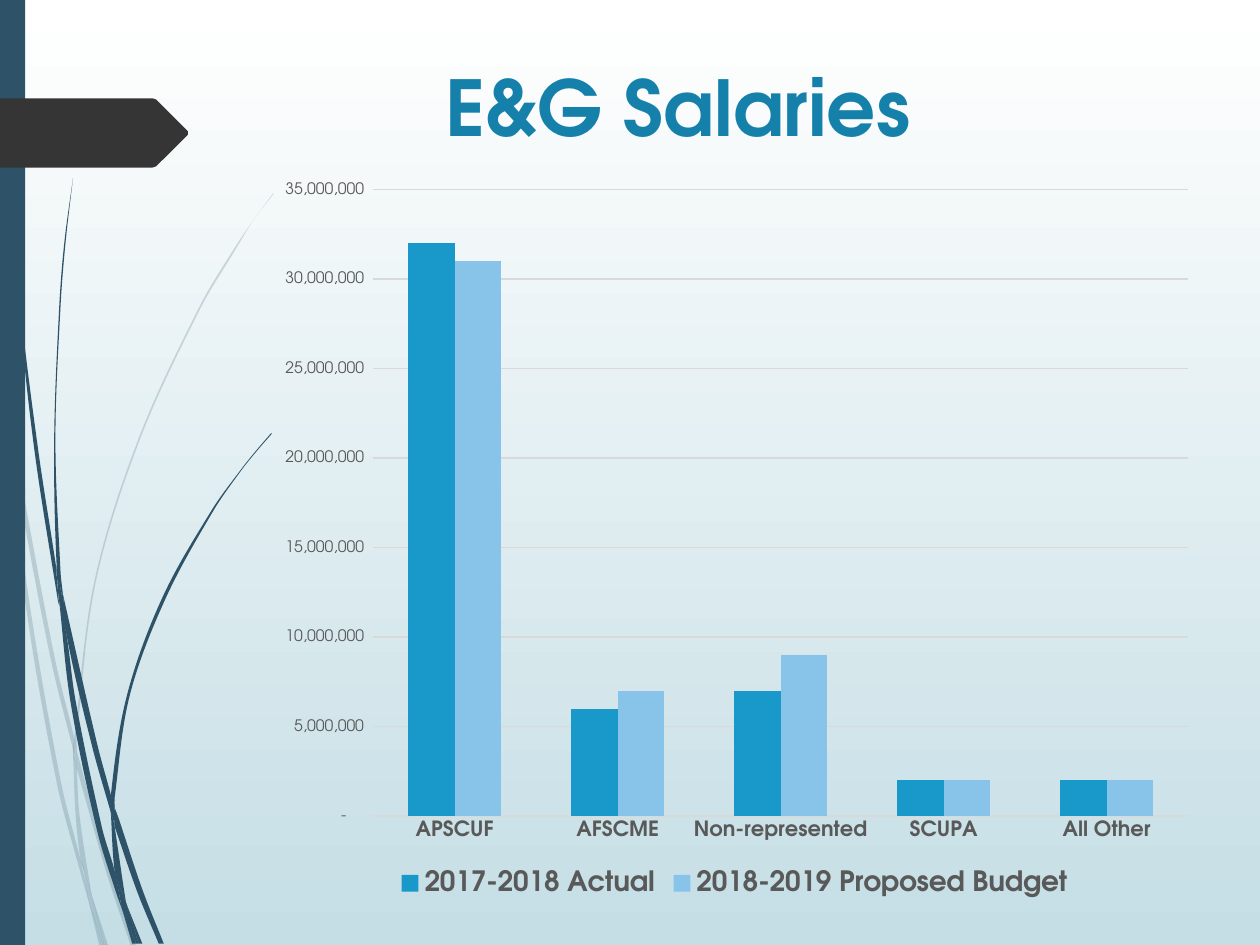
from math import dist
from lxml import etree
from pptx import Presentation
from pptx.chart.data import CategoryChartData
from pptx.dml.color import RGBColor
from pptx.enum.chart import XL_CHART_TYPE, XL_LEGEND_POSITION, XL_TICK_MARK
from pptx.enum.shapes import MSO_SHAPE
from pptx.enum.text import MSO_ANCHOR, PP_ALIGN
from pptx.oxml.ns import qn
from pptx.util import Inches, Pt

COLUMNS = XL_CHART_TYPE.COLUMN_CLUSTERED
LEGEND_BOTTOM = XL_LEGEND_POSITION.BOTTOM
NO_TICK = XL_TICK_MARK.NONE
RECTANGLE = MSO_SHAPE.RECTANGLE
MIDDLE = MSO_ANCHOR.MIDDLE
CENTER = PP_ALIGN.CENTER

FONT = "TeX Gyre Adventor"
WHITE = RGBColor(0xFF, 0xFF, 0xFF)
PALE_BLUE = RGBColor(0xC5, 0xDE, 0xE5)
NAVY = RGBColor(0x2E, 0x53, 0x69)
CHARCOAL = RGBColor(0x35, 0x35, 0x35)
TITLE_BLUE = RGBColor(0x15, 0x81, 0xAA)
TEXT_GRAY = RGBColor(0x59, 0x59, 0x59)
GRID_GRAY = RGBColor(0xD9, 0xD9, 0xD9)
ACTUAL_BLUE = RGBColor(0x19, 0x99, 0xC9)
BUDGET_BLUE = RGBColor(0x88, 0xC3, 0xEA)

TITLE = "E&G Salaries"
CATEGORIES = ["APSCUF", "AFSCME", "Non-represented", "SCUPA", "All Other"]
SERIES = [
    ("2017-2018 Actual", ACTUAL_BLUE, [32000000, 6000000, 7000000, 2000000, 2000000]),
    ("2018-2019 Proposed Budget", BUDGET_BLUE, [31000000, 7000000, 9000000, 2000000, 2000000]),
]
NUMBER_FORMAT = '_(* #,##0_);_(* \\(#,##0\\);_(* "-"??_);_(@_)'

# Each blade of grass has two edges, both listed from top to bottom, in inches.
PALE_BLADES = [
    ([(0, 2.82), (.06, 3.22), (.08, 3.5)], [(0, 2.99), (.07, 3.44), (.08, 3.5)]),
    ([(.1, 3.45), (.43, 5.2), (.59, 5.86)], [(.12, 3.76), (.4, 5.22), (.59, 5.99)]),
    ([(.61, 5.96), (.64, 6.07), (.88, 6.92), (1.08, 7.51)],
     [(.61, 6.1), (.85, 6.94), (1.04, 7.51)]),
    ([(.73, 7.11), (.86, 7.51)], [(.73, 7.11), (.83, 7.51)]),
    ([(.08, 3.5), (.12, 3.76), (.22, 4.69), (.48, 6.19), (.64, 6.83), (.69, 7.07), (.7, 7.14)],
     [(.08, 3.5), (.19, 4.7), (.45, 6.21), (.64, 6.93), (.7, 7.14)]),
    ([(.58, 5.99), (.61, 6.08), (.61, 6.1), (.63, 6.46), (.72, 7.06), (.73, 7.11)],
     [(.58, 5.99), (.6, 6.46), (.64, 6.83), (.67, 6.92), (.73, 7.11)]),
    ([(2.17, 1.53), (2.01, 1.75), (1.86, 1.97), (1.58, 2.44), (1.1, 3.48),
      (.75, 4.61), (.59, 5.84), (.59, 5.86), (.61, 5.96)],
     [(2.17, 1.54), (2.01, 1.75), (1.87, 1.98), (1.59, 2.45), (1.11, 3.49),
      (.76, 4.62), (.61, 5.84), (.61, 5.96)]),
    ([(.7, 7.14), (.82, 7.51)], [(.7, 7.14), (.79, 7.51)]),
    ([(.59, 5.86), (.61, 5.96), (.61, 6.1)], [(.59, 5.86), (.58, 5.99), (.61, 6.08), (.61, 6.1)]),
    ([(.65, 6.83), (.67, 6.92), (.73, 7.11), (.83, 7.51)],
     [(.65, 6.83), (.69, 7.07), (.7, 7.14), (.82, 7.51)]),
]
DARK_BLADES = [
    ([(.03, 0), (.04, .48), (.06, 1.09), (.15, 2.32), (.3, 3.55), (.45, 4.53),
      (.45, 4.57), (.47, 4.81)],
     [(.02, 0), (.03, .48), (.05, 1.1), (.14, 2.33), (.27, 3.55), (.46, 4.77), (.47, 4.81)]),
    ([(.5, 4.72), (.77, 5.9), (.88, 6.31), (.88, 6.33), (.88, 6.45)],
     [(.5, 4.72), (.53, 5.05), (.73, 5.92), (.88, 6.45)]),
    ([(.91, 6.41), (.94, 6.49), (1.13, 7.06), (1.3, 7.49)],
     [(.91, 6.56), (1.09, 7.08), (1.26, 7.49)]),
    ([(.47, 4.77), (.53, 5.05), (.6, 5.56), (.81, 6.57), (.91, 6.91), (.96, 7.17), (.97, 7.22)],
     [(.47, 4.77), (.56, 5.57), (.77, 6.59), (.92, 7.08), (.97, 7.22)]),
    ([(.58, 1.41), (.52, 1.93), (.48, 2.44), (.44, 3.49), (.48, 4.53), (.5, 4.72)],
     [(.58, 1.41), (.51, 1.93), (.47, 2.44), (.43, 3.49), (.45, 4.49), (.49, 4.72)]),
    ([(1.01, 7.19), (1.13, 7.49)], [(1.01, 7.19), (1.1, 7.49)]),
    ([(.45, 4.49), (.49, 4.72), (.5, 4.72), (.53, 5.05)],
     [(.45, 4.49), (.45, 4.53), (.47, 4.77), (.53, 5.05)]),
    ([(2.15, 3.44), (2.03, 3.58), (1.91, 3.73), (1.68, 4.05), (1.29, 4.74),
      (1.01, 5.51), (.88, 6.31), (.91, 6.41)],
     [(2.16, 3.44), (2.03, 3.59), (1.91, 3.74), (1.69, 4.06), (1.31, 4.76),
      (1.03, 5.52), (.91, 6.33), (.91, 6.41)]),
    ([(.97, 7.22), (1.08, 7.49)], [(.97, 7.22), (1.05, 7.49)]),
    ([(.88, 6.45), (.9, 6.51), (.91, 6.56), (1, 7.16), (1.01, 7.19)],
     [(.88, 6.45), (.91, 6.91), (.96, 7.06), (1.01, 7.19)]),
    ([(.88, 6.31), (.91, 6.41), (.91, 6.56)],
     [(.88, 6.31), (.88, 6.33), (.88, 6.45), (.9, 6.51), (.91, 6.56)]),
    ([(.91, 6.91), (.96, 7.06), (1.01, 7.19), (1.1, 7.49)],
     [(.91, 6.91), (.96, 7.17), (.97, 7.22), (1.08, 7.49)]),
]
TAG = [(0, .78), (1.21, .78), (1.24, .79), (1.49, 1.04), (1.49, 1.07),
       (1.24, 1.32), (1.21, 1.33), (0, 1.33)]


def format_font(font, size, color, bold=False):
    font.name = FONT
    font.size = Pt(size)
    font.bold = bold
    font.color.rgb = color


def paint(shape, color, opacity=100):
    shape.shadow.inherit = False
    shape.line.fill.background()
    shape.fill.solid()
    shape.fill.fore_color.rgb = color
    if opacity < 100:
        rgb = shape._element.spPr.find(qn("a:solidFill")).find(qn("a:srgbClr"))
        etree.SubElement(rgb, qn("a:alpha")).set("val", str(opacity * 1000))


def add_outline(shapes, points, color, opacity=100):
    corners = [(Inches(x), Inches(y)) for x, y in points]
    builder = shapes.build_freeform(*corners[0])
    builder.add_line_segments(corners[1:], close=True)
    shape = builder.convert_to_shape()
    paint(shape, color, opacity)
    return shape


def bezier_controls(edge):
    """Yield both control points for each span of a smooth curve through edge."""
    padded = [edge[0], *edge, edge[-1]]
    for before, start, end, after in zip(padded, padded[1:], padded[2:], padded[3:]):
        reach = dist(start, end) / 3
        first = reach / dist(before, end)
        second = reach / dist(start, after)
        yield (tuple(s + (e - b) * first for b, s, e in zip(before, start, end)),
               tuple(e - (a - s) * second for s, e, a in zip(start, end, after)))


def add_blade(shapes, edges, color, opacity):
    down, up = edges[0], edges[1][::-1]
    points = down + up[up[0] == down[-1]:]
    shape = add_outline(shapes, points, color, opacity)
    controls = {}
    for edge in (down, up):
        controls.update(zip(zip(edge, edge[1:]), bezier_controls(edge)))
    left, top = (min(axis) for axis in zip(*points))
    lines = list(shape._element.iter(qn("a:lnTo")))
    for line, span in zip(lines, zip(points, points[1:])):
        if span in controls:
            line.tag = qn("a:cubicBezTo")
            for place, (x, y) in enumerate(controls[span]):
                point = etree.Element(qn("a:pt"))
                point.set("x", str(Inches(x - left)))
                point.set("y", str(Inches(y - top)))
                line.insert(place, point)


def add_background(slide):
    fill = slide.background.fill
    fill.gradient()
    fill.gradient_angle = 270
    for stop, position, color in zip(fill.gradient_stops, (0, 1), (WHITE, PALE_BLUE)):
        stop.position = position
        stop.color.rgb = color


def add_decoration(slide):
    for blades, opacity in ((PALE_BLADES, 20), (DARK_BLADES, 100)):
        group = slide.shapes.add_group_shape()
        for edges in blades:
            add_blade(group.shapes, edges, NAVY, opacity)
    bar = slide.shapes.add_shape(RECTANGLE, 0, 0, Inches(0.2), Inches(7.5))
    paint(bar, NAVY)
    add_outline(slide.shapes, TAG, CHARCOAL)


def add_title(slide):
    title = slide.shapes.title
    title.left, title.top = Inches(1.92), Inches(0.42)
    title.width, title.height = Inches(6.92), Inches(0.84)
    frame = title.text_frame
    frame.text = TITLE
    frame.vertical_anchor = MIDDLE
    paragraph = frame.paragraphs[0]
    paragraph.alignment = CENTER
    format_font(paragraph.runs[0].font, 44, TITLE_BLUE, bold=True)


def add_salary_chart(slide):
    data = CategoryChartData(number_format=NUMBER_FORMAT)
    data.categories = CATEGORIES
    for name, _, values in SERIES:
        data.add_series(name, values)
    chart = slide.shapes.add_chart(
        COLUMNS, Inches(2.08), Inches(1.33), Inches(7.5), Inches(5.83), data).chart
    chart.has_title = False
    chart.font.name, chart.font.size = FONT, Pt(10)
    plot = chart.plots[0]
    plot.gap_width, plot.overlap, plot.vary_by_categories = 150, 0, False
    for series, (_, color, _) in zip(plot.series, SERIES):
        series.format.fill.solid()
        series.format.fill.fore_color.rgb = color
    for axis, size, bold in ((chart.category_axis, 12, True), (chart.value_axis, 9, False)):
        axis.major_tick_mark = axis.minor_tick_mark = NO_TICK
        axis.format.line.fill.background()
        format_font(axis.tick_labels.font, size, TEXT_GRAY, bold)
    values = chart.value_axis
    values.minimum_scale, values.maximum_scale, values.major_unit = 0, 35000000, 5000000
    values.tick_labels.number_format = NUMBER_FORMAT
    values.tick_labels.number_format_is_linked = False
    grid = values.major_gridlines.format.line
    grid.color.rgb, grid.width = GRID_GRAY, Pt(0.75)
    chart.has_legend = True
    chart.legend.position = LEGEND_BOTTOM
    chart.legend.include_in_layout = False
    format_font(chart.legend.font, 16, TEXT_GRAY, bold=True)


presentation = Presentation()
presentation.slide_width, presentation.slide_height = Inches(10), Inches(7.5)
slide = presentation.slides.add_slide(presentation.slide_layouts[5])
add_background(slide)
add_decoration(slide)
add_title(slide)
add_salary_chart(slide)
presentation.save("out.pptx")
